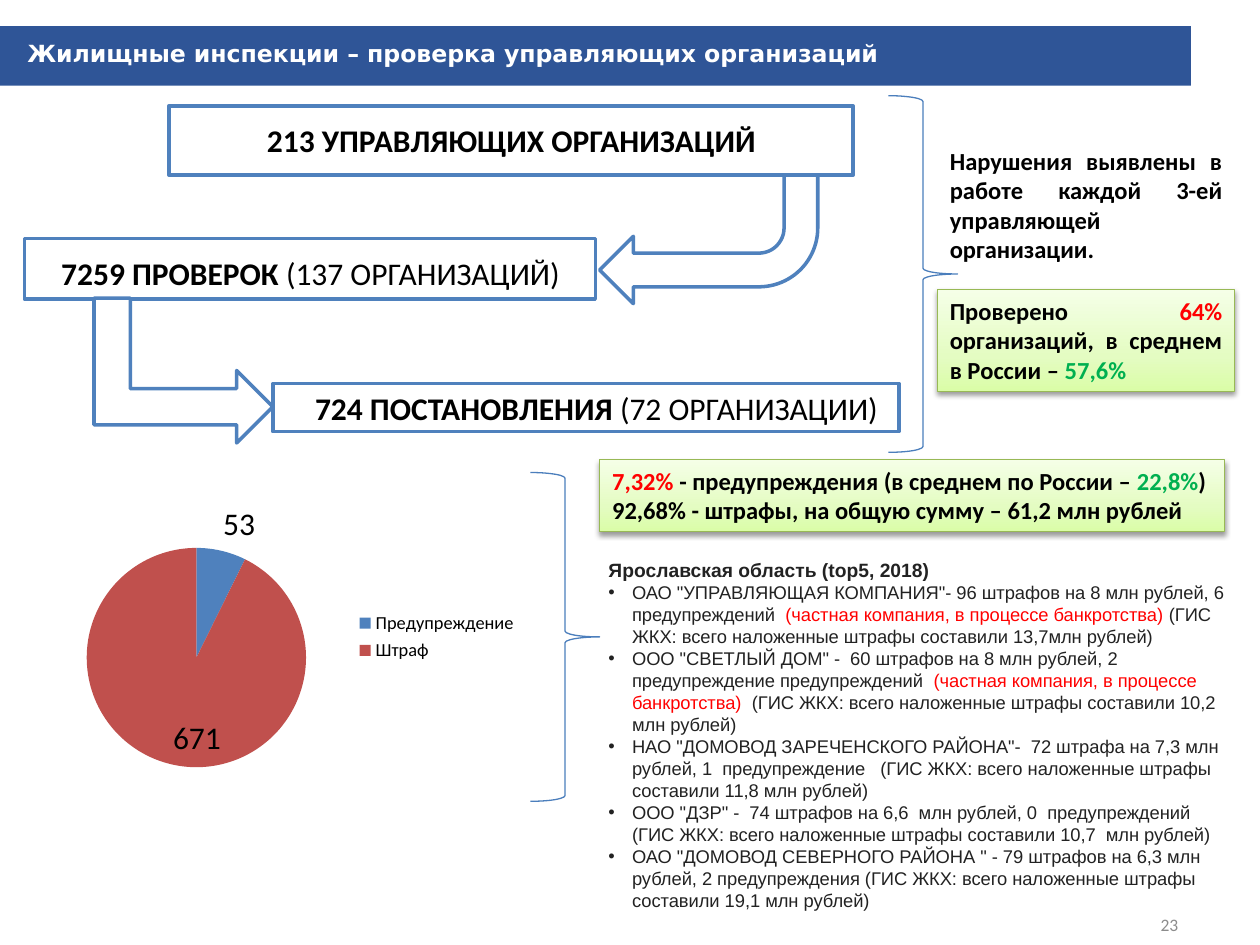
import copy

import pptx
import pptx.chart.data
import pptx.dml.color
import pptx.enum.chart
import pptx.enum.shapes
import pptx.enum.text
import pptx.oxml
import pptx.oxml.ns
import pptx.util

Pt = pptx.util.Pt
RGBColor = pptx.dml.color.RGBColor
SHAPE = pptx.enum.shapes.MSO_SHAPE
ALIGN = pptx.enum.text.PP_ALIGN
ANCHOR = pptx.enum.text.MSO_ANCHOR
GROW = pptx.enum.text.MSO_AUTO_SIZE.SHAPE_TO_FIT_TEXT
LABEL = pptx.enum.chart.XL_LABEL_POSITION
qn = pptx.oxml.ns.qn
NAMESPACES = pptx.oxml.ns.nsdecls

NAVY = RGBColor(0x2F, 0x55, 0x97)
BLUE = RGBColor(0x4F, 0x81, 0xBD)
BRACE_BLUE = RGBColor(0x4B, 0x7E, 0xBC)
BRICK = RGBColor(0xC0, 0x50, 0x4D)
RED = RGBColor(0xFF, 0x00, 0x00)
GREEN = RGBColor(0x00, 0xB0, 0x50)
LIME_LINE = RGBColor(0x98, 0xB9, 0x55)
LIME_STOPS = [(0, RGBColor(0xDA, 0xFD, 0xA7)),
              (0.35, RGBColor(0xE4, 0xFC, 0xC2)),
              (1, RGBColor(0xF5, 0xFF, 0xE7))]
BLACK = RGBColor(0x00, 0x00, 0x00)
WHITE = RGBColor(0xFF, 0xFF, 0xFF)
GRAY = RGBColor(0x8C, 0x8C, 0x8C)
DARK = RGBColor(0x22, 0x22, 0x22)

TITLE = {"name": "DejaVu Sans", "size": Pt(13.5), "bold": True, "color": WHITE}
PAGE = {"name": "Calibri", "size": Pt(10), "bold": False, "color": GRAY}
STEP = {"name": "Calibri", "size": Pt(18), "bold": True, "color": BLACK}
NOTE = {**STEP, "size": Pt(14)}
HEADING = {"name": "Arial", "size": Pt(11), "bold": True, "color": DARK}
BODY = {**HEADING, "size": Pt(10.5), "bold": False}


class SlideBuilder:
    def __init__(self, slide):
        self.slide = slide

    def fill_text(self, frame, paragraphs, style, align=ALIGN.LEFT, anchor=ANCHOR.TOP, grow=True):
        """Each paragraph is a list of (text, style changes)."""
        frame.word_wrap = True
        frame.vertical_anchor = anchor
        if grow:
            frame.auto_size = GROW
        for index, runs in enumerate(paragraphs):
            paragraph = frame.paragraphs[0] if index == 0 else frame.add_paragraph()
            paragraph.alignment = align
            for text, changes in runs:
                run = paragraph.add_run()
                run.text = text
                for name, value in {**style, **changes}.items():
                    if name == "color":
                        run.font.color.rgb = value
                    else:
                        setattr(run.font, name, value)

    def text(self, box, paragraphs, style, **options):
        shape = self.slide.shapes.add_textbox(*map(Pt, box))
        self.fill_text(shape.text_frame, paragraphs, style, **options)
        return shape

    def shape(self, kind, box, fill=None, line=None, width=2, rotation=0):
        shape = self.slide.shapes.add_shape(kind, *map(Pt, box))
        shape.shadow.inherit = False
        shape.rotation = rotation
        if fill is None:
            shape.fill.background()
        else:
            shape.fill.solid()
            shape.fill.fore_color.rgb = fill
        if line is None:
            shape.line.fill.background()
        else:
            shape.line.color.rgb = line
            shape.line.width = Pt(width)
        return shape

    def brace(self, box):
        self.shape(SHAPE.RIGHT_BRACE, box, line=BRACE_BLUE, width=0.75)

    def callout(self, box, paragraphs):
        shape = self.shape(SHAPE.RECTANGLE, box, line=LIME_LINE, width=0.75)
        shape.fill.gradient()
        shape.fill.gradient_angle = 90
        properties = shape._element.spPr
        stops = properties.find(".//" + qn("a:gsLst"))
        stops.insert(1, copy.deepcopy(stops[0]))
        for stop, (position, color) in zip(shape.fill.gradient_stops, LIME_STOPS):
            stop.position = position
            stop.color.rgb = color
        properties.find(qn("a:effectLst")).append(pptx.oxml.parse_xml(
            f'<a:outerShdw {NAMESPACES("a")} blurRad="{Pt(3.1)}" dist="{Pt(1.6)}" dir="5400000" '
            'rotWithShape="0"><a:srgbClr val="000000"><a:alpha val="38000"/></a:srgbClr></a:outerShdw>'))
        self.fill_text(shape.text_frame, paragraphs, NOTE, align=ALIGN.JUSTIFY)

    def bullet(self, paragraph):
        properties = paragraph._p.get_or_add_pPr()
        properties.set("marL", str(Pt(13.5)))
        properties.set("indent", str(-Pt(13.5)))
        for tag, name, value in (("buFont", "typeface", "Arial"), ("buChar", "char", "•")):
            properties.append(pptx.oxml.parse_xml(f'<a:{tag} {NAMESPACES("a")} {name}="{value}"/>'))

    def pie(self, box, values, colors, positions, layout):
        data = pptx.chart.data.CategoryChartData()
        data.categories = list(values)
        data.add_series("Series 1", list(values.values()))
        chart = self.slide.shapes.add_chart(
            pptx.enum.chart.XL_CHART_TYPE.PIE, *map(Pt, box), data).chart
        chart.has_title = False
        chart.has_legend = True
        chart.legend.position = pptx.enum.chart.XL_LEGEND_POSITION.RIGHT
        chart.legend.include_in_layout = False
        for font, size in ((chart.font, 18), (chart.legend.font, 10.5)):
            font.name, font.size = "Calibri", Pt(size)
            font.color.rgb = BLACK
        plot = chart.plots[0]
        plot.vary_by_categories = True
        for index, (color, position) in enumerate(zip(colors, positions)):
            point = plot.series[0].points[index]
            point.format.fill.solid()
            point.format.fill.fore_color.rgb = color
            point.data_label.font.size = Pt(18)
            point.data_label.position = position
        # Fixed place of the pie inside the chart frame
        area = chart._chartSpace.find(".//" + qn("c:plotArea"))
        for old in area.findall(qn("c:layout")):
            area.remove(old)
        places = "".join(f'<c:{name} val="{value}"/>' for name, value in layout.items())
        area.insert(0, pptx.oxml.parse_xml(
            f'<c:layout {NAMESPACES("c")}><c:manualLayout><c:layoutTarget val="inner"/>'
            f'<c:xMode val="edge"/><c:yMode val="edge"/>{places}</c:manualLayout></c:layout>'))


def main():
    presentation = pptx.Presentation()
    presentation.slide_width, presentation.slide_height = Pt(720), Pt(540)
    builder = SlideBuilder(presentation.slides.add_slide(presentation.slide_layouts[6]))

    # Title bar and page number
    builder.shape(SHAPE.RECTANGLE, (0, 15, 680.5, 34), fill=NAVY)
    builder.text((8.6, 20.9, 669, 19.4), [[("Жилищные инспекции – проверка управляющих организаций", {})]],
                 TITLE, align=ALIGN.JUSTIFY, anchor=ANCHOR.MIDDLE, grow=False)
    builder.text((617.8, 508.3, 62.6, 39.6), [[("23", {})]], PAGE,
                 align=ALIGN.RIGHT, anchor=ANCHOR.MIDDLE, grow=False)

    # Flow of three steps: frame, text place, bold and regular words
    builder.shape(SHAPE.BENT_ARROW, (342.7, 96.5, 124.6, 77), WHITE, BLUE, rotation=180)
    steps = [
        ((96.5, 60.5, 391, 39.6), (131.8, 65.5, 321, 29), "213 УПРАВЛЯЮЩИХ ОРГАНИЗАЦИЙ", ""),
        ((14, 136.4, 326.2, 34.6), (14.4, 141.8, 326.2, 29), "7259 ПРОВЕРОК ", "(137 ОРГАНИЗАЦИЙ)"),
        ((155.9, 219.2, 357.8, 27.4), (162, 218.9, 357.8, 29), "724 ПОСТАНОВЛЕНИЯ ", "(72 ОРГАНИЗАЦИИ)"),
    ]
    for frame, place, count, detail in steps:
        builder.shape(SHAPE.RECTANGLE, frame, WHITE, BLUE)
        runs = [(count, {})] + ([(detail, {"bold": False})] if detail else [])
        builder.text(place, [runs], STEP, align=ALIGN.CENTER)
    builder.shape(SHAPE.BENT_UP_ARROW, (63.4, 160.6, 82.8, 102.2), WHITE, BLUE, rotation=90)

    # Conclusions beside the flow
    builder.text((535.7, 79.9, 169.9, 74.9),
                 [[("Нарушения выявлены в работе каждой 3-ей управляющей организации.", {})]],
                 NOTE, align=ALIGN.JUSTIFY)
    builder.brace((507.6, 54.7, 39.6, 203.8))
    builder.callout((535.7, 165.6, 169.9, 58.3), [
        [("Проверено ", {}), ("64% ", {"color": RED}),
         ("организаций, в среднем в России – ", {}), ("57,6%", {"color": GREEN})]])

    # Sanctions: pie and summary
    builder.brace((303.1, 270, 39.6, 187.9))
    builder.callout((342.7, 262.8, 357.1, 41), [
        [("7,32% ", {"color": RED}), ("- предупреждения (в среднем по России – ", {}),
         ("22,8%", {"color": GREEN}), (")", {})],
        [("92,68% - штрафы, на общую сумму – 61,2 млн рублей", {})]])
    builder.pie((24.5, 278.6, 278.6, 170.6), {"Предупреждение": 53, "Штраф": 671},
                (BLUE, BRICK), (LABEL.OUTSIDE_END, LABEL.INSIDE_END),
                {"x": 0.09, "y": 0.2, "w": 0.45, "h": 0.74})

    # Top five of the region
    red = {"color": RED}
    companies = [
        [("ОАО \"УПРАВЛЯЮЩАЯ КОМПАНИЯ\"- 96 штрафов на 8 млн рублей, 6 предупреждений  ", {}),
         ("(частная компания, в процессе банкротства) ", red),
         ("(ГИС ЖКХ: всего наложенные штрафы составили 13,7млн рублей)", {})],
        [("ООО \"СВЕТЛЫЙ ДОМ\" -  60 штрафов на 8 млн рублей, 2 предупреждение предупреждений ", {}),
         (" (частная компания, в процессе банкротства)  ", red),
         ("(ГИС ЖКХ: всего наложенные штрафы составили 10,2 млн рублей)", {})],
        [("НАО \"ДОМОВОД ЗАРЕЧЕНСКОГО РАЙОНА\"-  72 штрафа на 7,3 млн рублей, 1  предупреждение   "
          "(ГИС ЖКХ: всего наложенные штрафы составили 11,8 млн рублей)", {})],
        [("ООО \"ДЗР\" -  74 штрафов на 6,6  млн рублей, 0  предупреждений  "
          "(ГИС ЖКХ: всего наложенные штрафы составили 10,7  млн рублей)", {})],
        [("ОАО \"ДОМОВОД СЕВЕРНОГО РАЙОНА \" - 79 штрафов на 6,3 млн рублей, 2 предупреждения "
          "(ГИС ЖКХ: всего наложенные штрафы составили 19,1 млн рублей)", {})],
    ]
    heading = [("Ярославская область (top5, 2018)", HEADING)]
    ranking = builder.text((340.6, 315.4, 370.8, 223.9), [heading] + companies, BODY)
    for paragraph in ranking.text_frame.paragraphs[1:]:
        builder.bullet(paragraph)

    presentation.save("out.pptx")


if __name__ == "__main__":
    main()
